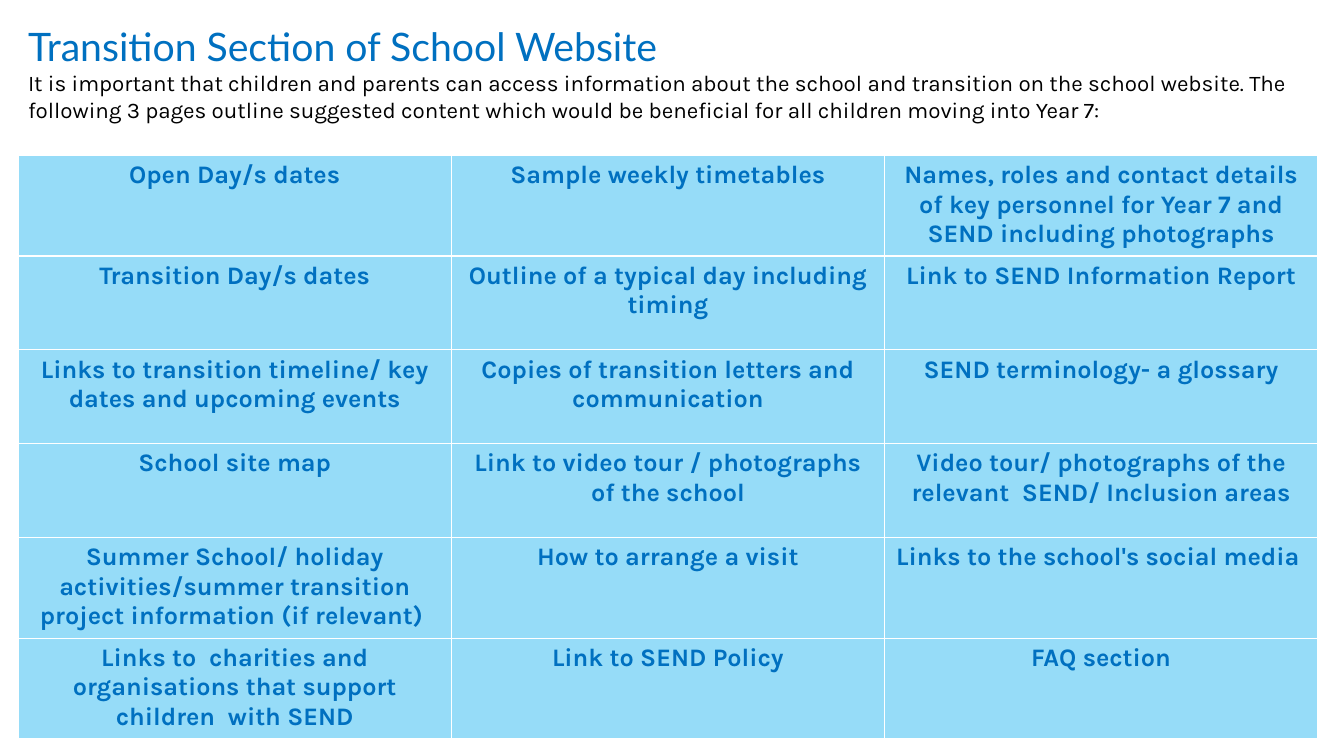
"""Build the slide on the transition section of a school website."""
from pptx import Presentation
from pptx import util as u
from pptx.dml.color import RGBColor
from pptx.enum import text

BLUE = RGBColor(0x00, 0x70, 0xC0)
BLACK = RGBColor(0x00, 0x00, 0x00)
LIGHT_BLUE = RGBColor(0x96, 0xDC, 0xF8)

TITLE = "Transition Section of School Website"
INTRODUCTION = (
    "It is important that children and parents can access information about the school "
    "and transition on the school website. The following 3 pages outline suggested content "
    "which would be beneficial for all children moving into Year 7:"
)
WEBSITE_CONTENT = [
    ["Open Day/s dates",
     "Sample weekly timetables",
     "Names, roles and contact details of key personnel for Year 7 and SEND including photographs"],
    ["Transition Day/s dates",
     "Outline of a typical day including timing",
     "Link to SEND Information Report"],
    ["Links to transition timeline/ key dates and upcoming events",
     "Copies of transition letters and communication",
     "SEND terminology- a glossary"],
    ["School site map",
     "Link to video tour / photographs of the school",
     "Video tour/ photographs of the relevant  SEND/ Inclusion areas"],
    ["Summer School/ holiday activities/summer transition project information (if relevant) ",
     "How to arrange a visit",
     "Links to the school's social media "],
    ["Links to  charities and organisations that support children  with SEND",
     "Link to SEND Policy",
     "FAQ section"],
]


def style(paragraph, name, size, color, bold=False):
    paragraph.font.name = name
    paragraph.font.size = u.Pt(size)
    paragraph.font.color.rgb = color
    paragraph.font.bold = bold


presentation = Presentation()
presentation.slide_width = u.Inches(13.33)
presentation.slide_height = u.Inches(7.5)
slide = presentation.slides.add_slide(presentation.slide_layouts[6])

heading = slide.shapes.add_textbox(u.Inches(0.18), u.Inches(0.17), u.Inches(12.97), u.Inches(1.11))
heading.text_frame.word_wrap = True
title = heading.text_frame.paragraphs[0]
title.text = TITLE
style(title, "Lato", 28, BLUE)
introduction = heading.text_frame.add_paragraph()
introduction.text = INTRODUCTION
style(introduction, "Karla", 16, BLACK)

table = slide.shapes.add_table(
    len(WEBSITE_CONTENT), 3, u.Inches(0.18), u.Inches(1.54), u.Inches(12.89), u.Inches(5.58)
).table
for row, labels in zip(table.rows, WEBSITE_CONTENT):
    row.height = u.Inches(0.93)
    for cell, label in zip(row.cells, labels):
        cell.fill.solid()
        cell.fill.fore_color.rgb = LIGHT_BLUE
        cell.text = label
        paragraph = cell.text_frame.paragraphs[0]
        paragraph.alignment = text.PP_ALIGN.CENTER
        style(paragraph, "Karla", 18, BLUE, bold=True)

presentation.save("out.pptx")
